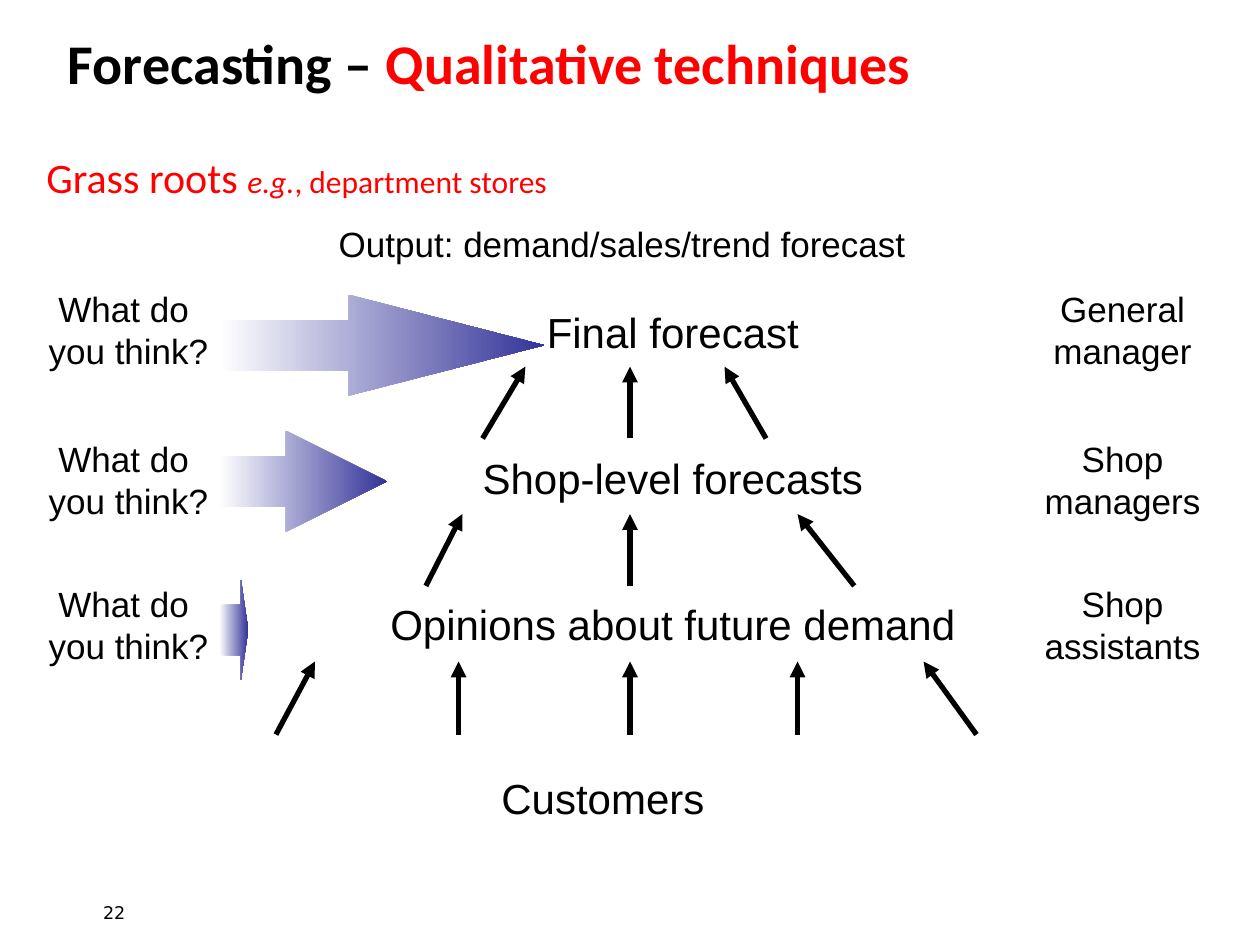
import pptx
import pptx.util
import pptx.dml.color
import pptx.enum.shapes
import pptx.enum.text
from lxml import etree

Inches, Pt = pptx.util.Inches, pptx.util.Pt
RGBColor = pptx.dml.color.RGBColor
Align = pptx.enum.text.PP_ALIGN
Anchor = pptx.enum.text.MSO_ANCHOR
BLACK = RGBColor(0, 0, 0)
RED = RGBColor(255, 0, 0)
WHITE = RGBColor(255, 255, 255)
INDIGO = RGBColor(0x33, 0x33, 0x99)
DRAWING_NS = "http://schemas.openxmlformats.org/drawingml/2006/main"

# Content: a run is (text, size, colour, bold, italic)
TITLE = [("Forecasting – ", 32, BLACK, True, False),
         ("Qualitative techniques", 32, RED, True, False)]
SUBTITLE = [("Grass roots ", 24, RED, False, False),
            ("e.g.", 18, RED, False, True),
            (", department stores", 18, RED, False, False)]
OUTPUT = "Output: demand/sales/trend forecast"
QUESTION = ["What do ", "you think?"]
SOURCE = "Customers"
PAGE_NUMBER = "22"

# Levels, top down: forecast, its top, people, side label top,
# block arrow (top, width, head ratio)
LEVELS = [
    ("Final forecast", 2.38, ["General", "manager"], 2.23, (2.34, 2.58, 1.94)),
    ("Shop-level forecasts", 3.54, ["Shop", "managers"], 3.42, (3.42, 1.33, 1)),
    ("Opinions about future demand", 4.7, ["Shop", "assistants"], 4.57,
     (4.6, 0.23, 0.25)),
]
# Flows between levels: (start y, end y, [(start x, end x), ...])
FLOWS = [
    (3.48, 2.91, [(3.83, 4.17), (5, 5), (6.08, 5.75)]),
    (4.65, 4.08, [(3.38, 3.67), (5, 5), (6.78, 6.33)]),
    (5.83, 5.25, [(2.19, 2.5), (3.64, 3.64), (5, 5), (6.33, 6.33), (7.75, 7.33)]),
]

# Columns: left and width in inches
QUESTIONS = (0.28, 1.48)
FORECASTS = (2.92, 4.84)
PEOPLE = (8.18, 1.46)
BLOCK_LEFT, BLOCK_HEIGHT = 1.74, 0.8
SIDE_HEIGHT, FORECAST_HEIGHT = 0.77, 0.5

deck = pptx.Presentation()
deck.slide_width, deck.slide_height = Inches(10), Inches(7.5)
slide = deck.slides.add_slide(deck.slide_layouts[6])


def add_frame(column, top, height, wrap=False, anchor=Anchor.TOP):
    left, width = column
    frame = slide.shapes.add_textbox(
        Inches(left), Inches(top), Inches(width), Inches(height)).text_frame
    frame.word_wrap = wrap
    frame.vertical_anchor = anchor
    return frame


def add_heading(runs, column, top, height):
    paragraph = add_frame(column, top, height).paragraphs[0]
    paragraph.font.name = "Calibri"
    for text, size, colour, bold, italic in runs:
        run = paragraph.add_run()
        run.text = text
        run.font.size = Pt(size)
        run.font.color.rgb = colour
        run.font.bold, run.font.italic = bold, italic


def add_label(lines, column, top, height, size, align=Align.CENTER,
              font="Arial", **frame_options):
    frame = add_frame(column, top, height, **frame_options)
    for index, line in enumerate(lines):
        paragraph = frame.add_paragraph() if index else frame.paragraphs[0]
        paragraph.text = line
        paragraph.alignment = align
        paragraph.font.name = font
        paragraph.font.size = Pt(size)
        paragraph.font.color.rgb = BLACK


def add_block_arrow(top, width, head_ratio):
    arrow = slide.shapes.add_shape(
        pptx.enum.shapes.MSO_SHAPE.RIGHT_ARROW, Inches(BLOCK_LEFT),
        Inches(top), Inches(width), Inches(BLOCK_HEIGHT))
    arrow.shadow.inherit = False
    arrow.adjustments[0], arrow.adjustments[1] = 0.5, head_ratio
    arrow.line.fill.background()
    arrow.fill.gradient()
    arrow.fill.gradient_angle = 0
    for stop, colour in zip(arrow.fill.gradient_stops, (WHITE, INDIGO)):
        stop.color.rgb = colour


def add_flow(start_x, start_y, end_x, end_y):
    flow = slide.shapes.add_connector(
        pptx.enum.shapes.MSO_CONNECTOR.STRAIGHT, Inches(start_x),
        Inches(start_y), Inches(end_x), Inches(end_y))
    flow.line.color.rgb = BLACK
    flow.line.width = Pt(3)
    etree.SubElement(flow.line._get_or_add_ln(),
                     f"{{{DRAWING_NS}}}tailEnd", type="triangle")
    etree.SubElement(flow._element.spPr, f"{{{DRAWING_NS}}}effectLst")


# Headings and page number
add_heading(SUBTITLE, (0.27, 4.63), 1.15, 0.5)
add_heading(TITLE, (0.44, 8.11), 0.18, 0.64)
add_label([PAGE_NUMBER], (0.72, 0.7), 6.98, 0.52, 10, Align.LEFT,
          "DejaVu Sans", wrap=True, anchor=Anchor.MIDDLE)

# Bottom-up flows from customers to the final forecast
add_label([SOURCE], (3.87, 1.83), 6.08, FORECAST_HEIGHT, 24)
for start_y, end_y, spans in FLOWS:
    for start_x, end_x in spans:
        add_flow(start_x, start_y, end_x, end_y)

# Output and the three levels
add_label([OUTPUT], (2.59, 4.73), 1.72, 0.44, 20, Align.LEFT)
for forecast, forecast_top, people, side_top, block_arrow in LEVELS:
    add_label(QUESTION, QUESTIONS, side_top, SIDE_HEIGHT, 20)
    add_label(people, PEOPLE, side_top, SIDE_HEIGHT, 20)
    add_block_arrow(*block_arrow)
    add_label([forecast], FORECASTS, forecast_top, FORECAST_HEIGHT, 24, wrap=True)

deck.save("out.pptx")
